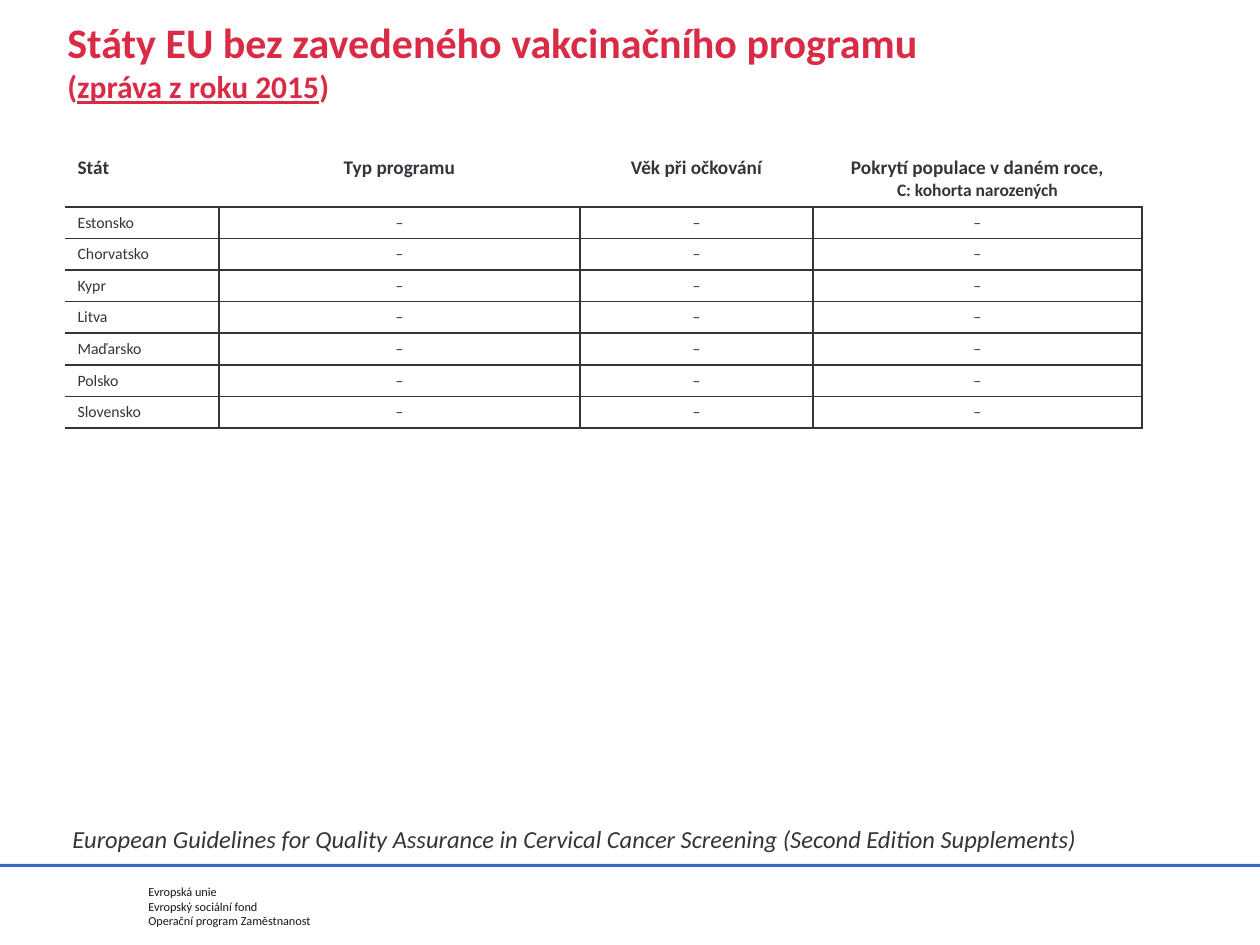
from copy import deepcopy
from pptx import Presentation, util as u
from pptx.dml.color import RGBColor
from pptx.enum import shapes, text
from pptx.oxml import parse_xml
from pptx.oxml.ns import nsdecls

RED = RGBColor(0xDA, 0x2B, 0x46)
DARK = RGBColor(0x36, 0x34, 0x3B)
BLACK = RGBColor(0x18, 0x18, 0x18)
BLUE = RGBColor(0x3D, 0x67, 0xBC)
LEFT, MID = text.PP_ALIGN.LEFT, text.PP_ALIGN.CENTER
BREAK = "\n"


def px(n):
    return round(n * u.Inches(1) / 126)


class Deck:
    face = "Calibri"

    def __init__(self, wide, high):
        self.show = Presentation()
        self.show.slide_width, self.show.slide_height = px(wide), px(high)
        self.slide = self.show.slides.add_slide(self.show.slide_layouts[6])

    def fill(self, para, runs, size, color, align=LEFT, **form):
        para.alignment = align
        for words, extra in runs:
            if words == BREAK:
                para.add_line_break()
                para._p[-1].append(deepcopy(run._r.rPr))
                continue
            run = para.add_run()
            run.text = words
            values = {"name": self.face, "size": u.Pt(size), **form, **extra}
            for key, value in values.items():
                setattr(run.font, key, value)
            run.font.color.rgb = color

    def label(self, box, lines, size, color, anchor=text.MSO_ANCHOR.TOP, **form):
        frame = self.slide.shapes.add_textbox(*map(px, box)).text_frame
        frame.word_wrap = True
        frame.vertical_anchor = anchor
        for i, runs in enumerate(lines):
            para = frame.add_paragraph() if i else frame.paragraphs[0]
            self.fill(para, runs, size, color, **form)

    def bar(self, box, color):
        shape = self.slide.shapes.add_shape(shapes.MSO_SHAPE.RECTANGLE, *map(px, box))
        shape.shadow.inherit = False
        shape.fill.solid()
        shape.fill.fore_color.rgb = color
        shape.line.fill.background()

    def edge(self, cell, sides, color):
        for side in "LRTB":
            paint = "<a:noFill/>"
            if side in sides:
                paint = f'<a:solidFill><a:srgbClr val="{color}"/></a:solidFill>'
            cell._tc.get_or_add_tcPr().append(parse_xml(
                f'<a:ln{side} {nsdecls("a")} w="{u.Pt(1)}">{paint}</a:ln{side}>'))

    def table(self, left, top, cols, rows, heads, body, color):
        box = map(px, (left, top, sum(cols), sum(rows)))
        grid = self.slide.shapes.add_table(len(rows), len(cols), *box).table
        grid.first_row = grid.horz_banding = False
        for col, wide in zip(grid.columns, cols):
            col.width = px(wide)
        for row, high in zip(grid.rows, rows):
            row.height = px(high)
        for r, line in enumerate([heads] + body):
            for c, runs in enumerate(line):
                cell = grid.cell(r, c)
                sides = "B" if r == 0 else "LRTB" if c else "RTB"
                self.edge(cell, sides, color)
                cell.fill.background()
                if r:
                    cell.vertical_anchor = text.MSO_ANCHOR.MIDDLE
                self.fill(cell.text_frame.paragraphs[0], runs, 9 if r else 11,
                          color, MID if c else LEFT, bold=r == 0)


def plain(words):
    return [(words, {})]


def main():
    deck = Deck(1260, 945)
    deck.bar((0, 864, 1260, 3), BLUE)
    fund = ["Evropská unie", "Evropský sociální fond", "Operační program Zaměstnanost"]
    deck.label((136, 878, 236, 57), [plain(w) for w in fund], 7, BLACK)

    heads = [plain(w) for w in ("Stát", "Typ programu", "Věk při očkování")]
    heads.append([("Pokrytí populace v daném roce,", {}), (BREAK, {}),
                  ("C: kohorta narozených", {"size": u.Pt(10)})])
    states = ["Estonsko", "Chorvatsko", "Kypr", "Litva", "Maďarsko", "Polsko", "Slovensko"]
    body = [[plain(w) for w in (state, "–", "–", "–")] for state in states]
    deck.table(65, 150, [154, 361, 233, 329], [56] + [31] * len(states),
               heads, body, DARK)

    small = {"size": u.Pt(18)}
    title = [("Státy EU bez zavedeného vakcinačního programu", {}), (BREAK, {}),
             ("(", small), ("zpráva z roku 2015", {**small, "underline": True}),
             (")", small)]
    deck.label((55, 16, 1131, 90), [title], 24, RED,
               text.MSO_ANCHOR.MIDDLE, bold=True)
    source = ("European Guidelines for Quality Assurance in Cervical Cancer "
              "Screening (Second Edition Supplements)")
    deck.label((60, 818, 1086, 43), [plain(source)], 14, DARK, italic=True)
    deck.show.save("out.pptx")


if __name__ == "__main__":
    main()
